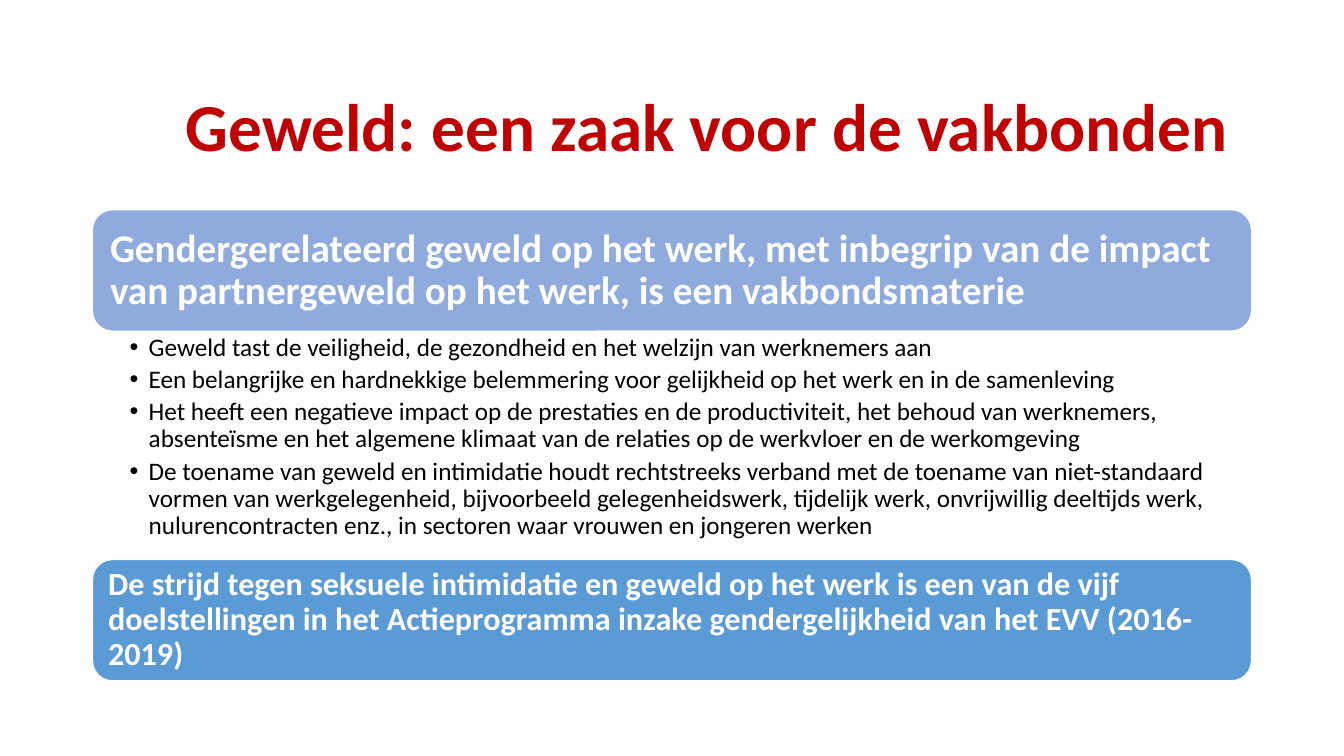
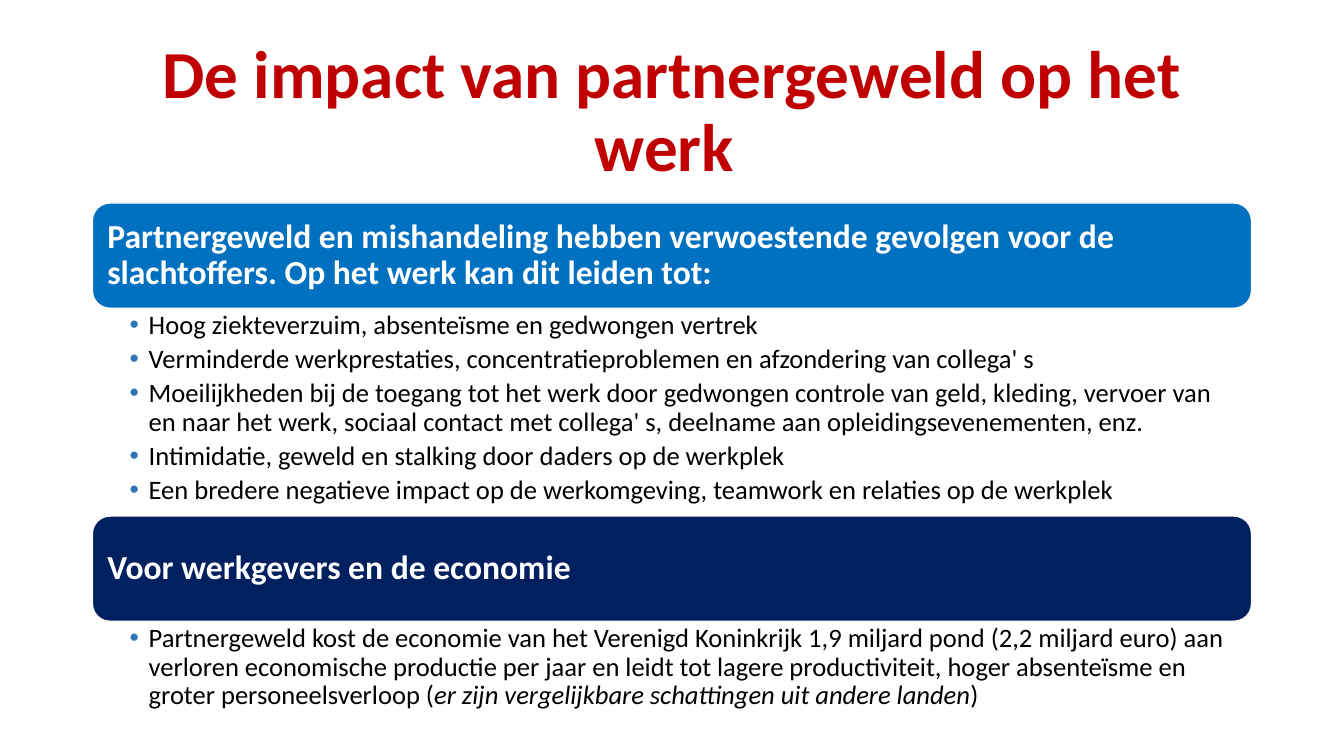
"""Build two Dutch slides on violence at work as a trade union matter."""
from dataclasses import dataclass

from lxml.etree import SubElement
from pptx import Presentation
from pptx.dml.color import RGBColor as RGB
from pptx.enum.shapes import MSO_SHAPE as SHAPE
from pptx.enum.text import MSO_ANCHOR as ANCHOR, PP_ALIGN as ALIGN
from pptx.oxml.ns import qn
from pptx.util import Pt


@dataclass(frozen=True)
class Theme:
    font: str = "Calibri"
    title: str = "C00000"
    white: str = "FFFFFF"
    black: str = "000000"
    periwinkle: str = "8FAADC"
    sky: str = "5B9BD5"
    blue: str = "0070C0"
    navy: str = "002060"
    bullet_blue: str = "2E75B6"
    title_size: int = 48
    line_spacing: float = 0.9
    bullet_gap: float = 0.2


T = Theme()
LEFT, WIDTH = 66, 828
BODY_INSETS = (26.6, 2.2, 13.2, 2.2)
INDENT = 13.7

SLIDES = [
    {
        "title": "Geweld: een zaak voor de vakbonden ",
        "title_box": (61, 65.5, 899, 54.7),
        "top": 149.8, "band_height": 86.8,
        "bullet_size": 18, "bullet_color": T.black,
        "sections": [
            {
                "head": "Gendergerelateerd geweld op het werk, met inbegrip van de impact "
                        "van partnergeweld op het werk, is een vakbondsmaterie",
                "fill": T.periwinkle, "size": 28, "inset": 8.4, "body_height": 163,
                "bullets": [
                    ("Geweld tast de veiligheid, de gezondheid en het welzijn van werknemers aan",),
                    ("Een belangrijke en hardnekkige belemmering voor gelijkheid op het werk "
                     "en in de samenleving",),
                    ("Het heeft een negatieve impact op de prestaties en de productiviteit, "
                     "het behoud van werknemers, absenteïsme en het algemene klimaat van de "
                     "relaties op de werkvloer en de werkomgeving",),
                    ("De toename van geweld en intimidatie houdt rechtstreeks verband met de "
                     "toename van niet-standaard vormen van werkgelegenheid, bijvoorbeeld "
                     "gelegenheidswerk, tijdelijk werk, onvrijwillig deeltijds werk, "
                     "nulurencontracten enz., in sectoren waar vrouwen en jongeren werken",),
                ],
            },
            {
                "head": "De strijd tegen seksuele intimidatie en geweld op het werk is een van "
                        "de vijf doelstellingen in het Actieprogramma inzake gendergelijkheid "
                        "van het EVV (2016-2019)",
                "fill": T.sky, "size": 23, "inset": 7, "body_height": 0, "bullets": [],
            },
        ],
    },
    {
        "title": "De impact van partnergeweld op het werk ",
        "title_box": (LEFT, 28.8, WIDTH, 104.4),
        "top": 145, "band_height": 75.2,
        "bullet_size": 19, "bullet_color": T.bullet_blue,
        "sections": [
            {
                "head": "Partnergeweld en mishandeling hebben verwoestende gevolgen voor de "
                        "slachtoffers. Op het werk kan dit leiden tot:",
                "fill": T.blue, "size": 24, "inset": 7, "body_height": 148.4,
                "bullets": [
                    ("Hoog ziekteverzuim, absenteïsme en gedwongen vertrek",),
                    ("Verminderde werkprestaties, concentratieproblemen en afzondering "
                     "van collega' s",),
                    ("Moeilijkheden bij de toegang tot het werk door gedwongen controle van "
                     "geld, kleding, vervoer van en naar het werk, sociaal contact met "
                     "collega' s, deelname aan opleidingsevenementen, enz.",),
                    ("Intimidatie, geweld en stalking door daders op de werkplek",),
                    ("Een bredere negatieve impact op de werkomgeving, teamwork en relaties "
                     "op de werkplek",),
                ],
            },
            {
                "head": "Voor werkgevers en de economie",
                "fill": T.navy, "size": 24, "inset": 7, "body_height": 68.4,
                "bullets": [
                    ("Partnergeweld kost de economie van het Verenigd Koninkrijk 1,9 miljard "
                     "pond (2,2 miljard euro) aan verloren economische productie per jaar en "
                     "leidt tot lagere productiviteit, hoger absenteïsme en groter "
                     "personeelsverloop (",
                     "er zijn vergelijkbare schattingen uit andere landen",
                     ")"),
                ],
            },
        ],
    },
]


def set_frame(tf, insets, anchor):
    tf.word_wrap = True
    tf.vertical_anchor = anchor
    tf.margin_left, tf.margin_top, tf.margin_right, tf.margin_bottom = map(Pt, insets)


def add_run(p, text, size, color, bold=False, italic=False):
    r = p.add_run()
    r.text = text
    r.font.name, r.font.size = T.font, Pt(size)
    r.font.bold, r.font.italic = bold, italic
    r.font.color.rgb = RGB.from_string(color)


def add_heading(tf, text, size, color, align):
    p = tf.paragraphs[0]
    p.alignment, p.line_spacing = align, T.line_spacing
    add_run(p, text, size, color, bold=True)


def add_title(s, text, box):
    tf = s.shapes.add_textbox(*map(Pt, box)).text_frame
    set_frame(tf, (7.2, 3.6, 7.2, 3.6), ANCHOR.MIDDLE)
    add_heading(tf, text, T.title_size, T.title, ALIGN.CENTER)


def add_band(s, top, height, section):
    sp = s.shapes.add_shape(SHAPE.ROUNDED_RECTANGLE, *map(Pt, (LEFT, top, WIDTH, height)))
    sp.shadow.inherit = False
    sp.fill.solid()
    sp.fill.fore_color.rgb = RGB.from_string(section["fill"])
    sp.line.color.rgb = RGB.from_string(T.white)
    sp.line.width = Pt(1)
    set_frame(sp.text_frame, [section["inset"]] * 4, ANCHOR.MIDDLE)
    add_heading(sp.text_frame, section["head"], section["size"], T.white, ALIGN.LEFT)


def set_bullet(p, color):
    pPr = p._p.get_or_add_pPr()
    pPr.set("marL", str(Pt(INDENT)))
    pPr.set("indent", str(-Pt(INDENT)))
    SubElement(SubElement(pPr, qn("a:buClr")), qn("a:srgbClr")).set("val", color)
    SubElement(pPr, qn("a:buFont")).set("typeface", "Arial")
    SubElement(pPr, qn("a:buChar")).set("char", "•")


def add_bullets(s, top, height, bullets, size, color):
    tf = s.shapes.add_textbox(*map(Pt, (LEFT, top, WIDTH, height))).text_frame
    set_frame(tf, BODY_INSETS, ANCHOR.TOP)
    for i, parts in enumerate(bullets):
        p = tf.add_paragraph() if i else tf.paragraphs[0]
        p.line_spacing, p.space_after = T.line_spacing, Pt(size * T.bullet_gap)
        set_bullet(p, color)
        for n, text in enumerate(parts):
            add_run(p, text, size, T.black, italic=n % 2 == 1)


def add_slide(prs, data):
    s = prs.slides.add_slide(prs.slide_layouts[6])
    add_title(s, data["title"], data["title_box"])
    top, height = data["top"], data["band_height"]
    for section in data["sections"]:
        add_band(s, top, height, section)
        top += height
        if section["bullets"]:
            add_bullets(s, top, section["body_height"], section["bullets"],
                        data["bullet_size"], data["bullet_color"])
        top += section["body_height"]


def main():
    prs = Presentation()
    prs.slide_width, prs.slide_height = Pt(960), Pt(540)
    for data in SLIDES:
        add_slide(prs, data)
    prs.save("out.pptx")


if __name__ == "__main__":
    main()
